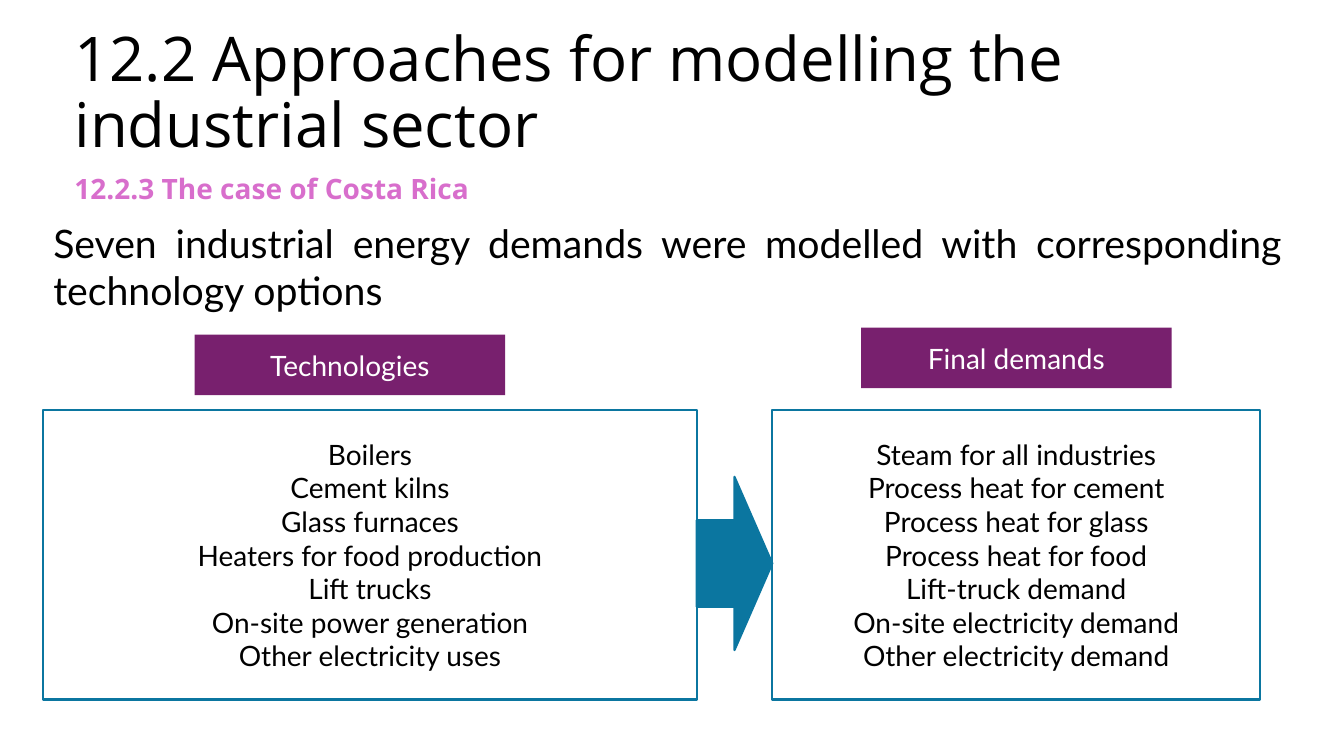
import dataclasses

import pptx
import pptx.dml.color
import pptx.enum.shapes
import pptx.enum.text
import pptx.util

Inches = pptx.util.Inches
Align = pptx.enum.text.PP_ALIGN
Anchor = pptx.enum.text.MSO_ANCHOR
Preset = pptx.enum.shapes.MSO_SHAPE


@dataclasses.dataclass(frozen=True)
class Theme:
    heading_font: str = "Open Sans"
    body_font: str = "Lato"
    black: str = "000000"
    white: str = "FFFFFF"
    pink: str = "D86ECC"
    purple: str = "78206E"
    blue: str = "0B76A0"
    title_size: int = 44
    lead_size: int = 28
    label_size: int = 20
    line_width: float = 1.5


THEME = Theme()

TECHNOLOGIES = [
    "Boilers",
    "Cement kilns",
    "Glass furnaces",
    "Heaters for food production",
    "Lift trucks",
    "On-site power generation",
    "Other electricity uses",
]
FINAL_DEMANDS = [
    "Steam for all industries",
    "Process heat for cement",
    "Process heat for glass",
    "Process heat for food",
    "Lift-truck demand",
    "On-site electricity demand",
    "Other electricity demand",
]

PANEL_TOP, PANEL_HEIGHT = 4.07, 2.87


def rgb(color):
    return pptx.dml.color.RGBColor.from_string(color)


def write_text(shape, text, font, size, color, align=Align.LEFT, anchor=Anchor.TOP, bold=False):
    frame = shape.text_frame
    frame.text = text
    frame.word_wrap = True
    frame.auto_size = pptx.enum.text.MSO_AUTO_SIZE.NONE
    frame.vertical_anchor = anchor
    for paragraph in frame.paragraphs:
        paragraph.alignment = align
        for run in paragraph.runs:
            run.font.name = font
            run.font.size = pptx.util.Pt(size)
            run.font.bold = bold
            run.font.color.rgb = rgb(color)
    return frame.paragraphs[0]


def set_title(slide, text, left, top, width, height):
    title = slide.shapes.title
    title.left, title.top = Inches(left), Inches(top)
    title.width, title.height = Inches(width), Inches(height)
    paragraph = write_text(title, text, THEME.heading_font, THEME.title_size, THEME.black,
                           anchor=Anchor.BOTTOM)
    paragraph.line_spacing = 0.9


def add_text(slide, text, left, top, width, height, *style, **options):
    box = slide.shapes.add_textbox(Inches(left), Inches(top), Inches(width), Inches(height))
    return write_text(box, text, *style, **options)


def add_block(slide, preset, left, top, width, height, fill=None, line=None):
    shape = slide.shapes.add_shape(
        preset, Inches(left), Inches(top), Inches(width), Inches(height))
    shape.shadow.inherit = False
    if fill:
        shape.fill.solid()
        shape.fill.fore_color.rgb = rgb(fill)
    else:
        shape.fill.background()
    if line:
        shape.line.color.rgb = rgb(line)
        shape.line.width = pptx.util.Pt(THEME.line_width)
    else:
        shape.line.fill.background()
    return shape


def add_label(slide, text, left, top):
    label = add_block(slide, Preset.RECTANGLE, left, top, 3.08, 0.6, fill=THEME.purple)
    write_text(label, text, THEME.body_font, THEME.label_size, THEME.white,
               Align.CENTER, Anchor.MIDDLE)


def add_panel(slide, items, left, width):
    panel = add_block(slide, Preset.RECTANGLE, left, PANEL_TOP, width, PANEL_HEIGHT,
                      line=THEME.blue)
    write_text(panel, "\n".join(items), THEME.body_font, THEME.label_size, THEME.black,
               Align.CENTER, Anchor.MIDDLE)


def main():
    presentation = pptx.Presentation()
    presentation.slide_width = Inches(13.33)
    presentation.slide_height = Inches(7.5)
    slide = presentation.slides.add_slide(presentation.slide_layouts.get_by_name("Title Only"))

    set_title(slide, "12.2 Approaches for modelling the industrial sector", 0.64, 0.12, 11.33, 1.53)
    subtitle = add_text(slide, "12.2.3 The case of Costa Rica", 0.64, 1.65, 6.8, 0.44,
                        THEME.heading_font, THEME.label_size, THEME.pink, bold=True)
    subtitle.space_after = pptx.util.Pt(12)
    add_text(slide,
             "Seven industrial energy demands were modelled with corresponding technology options",
             0.43, 2.13, 12.38, 1.04,
             THEME.body_font, THEME.lead_size, THEME.black, align=Align.JUSTIFY)

    add_label(slide, "Technologies", 1.93, 3.32)
    add_panel(slide, TECHNOLOGIES, 0.43, 6.48)
    add_label(slide, "Final demands", 8.54, 3.25)
    add_panel(slide, FINAL_DEMANDS, 7.66, 4.84)
    add_block(slide, Preset.RIGHT_ARROW, 6.91, 4.73, 0.75, 1.72,
              fill=THEME.blue, line=THEME.blue)

    presentation.save("out.pptx")


if __name__ == "__main__":
    main()
